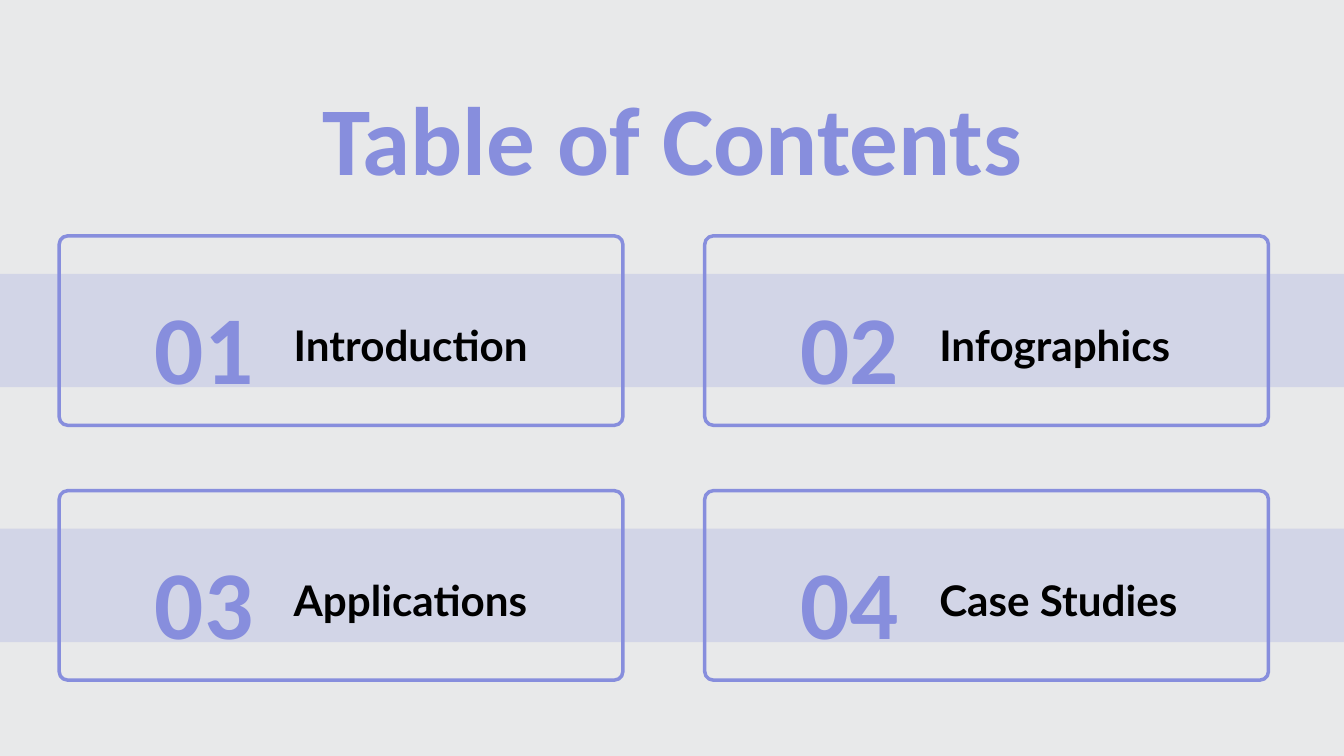
from lxml import etree
from pptx import Presentation
from pptx.dml.color import RGBColor
from pptx.enum.shapes import MSO_SHAPE
from pptx.enum.text import MSO_ANCHOR, MSO_AUTO_SIZE, PP_ALIGN
from pptx.oxml.ns import qn
from pptx.util import Pt

RECTANGLE, ROUNDED = MSO_SHAPE.RECTANGLE, MSO_SHAPE.ROUNDED_RECTANGLE
LEFT, CENTER = PP_ALIGN.LEFT, PP_ALIGN.CENTER

# Content
TITLE = "Table of Contents"
SECTIONS = [
    ("01", "Introduction"),
    ("02", "Infographics"),
    ("03", "Applications"),
    ("04", "Case Studies"),
]

# Style
COLORS = {"background": "E8E9EA", "accent": "878EDD", "label": "000000"}
HEADING = {"font": "Calibri", "size": 104.1, "color": "accent",
           "spacing": 1.18, "align": CENTER}
LABEL = {"font": "Lato", "size": 45.2, "color": "label",
         "spacing": 1.4, "align": LEFT}
BAND_ALPHA = 22

# Grid, in points
SLIDE_W, SLIDE_H = 1440, 810
COLUMNS = 2
GRID_LEFT, GRID_TOP = 63.4, 252.7
COLUMN_STEP, ROW_STEP = 691.7, 273
CARD_W, CARD_H = 604, 203
BAND_H = 121.5
CORNER = 9.2


def rgb(name):
    return RGBColor.from_string(COLORS[name])


def place(shape, left, top, width, height):
    shape.left, shape.top = Pt(left), Pt(top)
    shape.width, shape.height = Pt(width), Pt(height)


def write(shape, text, style):
    frame = shape.text_frame
    frame.text = text
    frame.word_wrap = True
    frame.auto_size = MSO_AUTO_SIZE.SHAPE_TO_FIT_TEXT
    frame.vertical_anchor = MSO_ANCHOR.TOP
    frame.margin_left = frame.margin_right = 0
    frame.margin_top = frame.margin_bottom = 0
    paragraph = frame.paragraphs[0]
    paragraph.alignment = style["align"]
    paragraph.line_spacing = style["spacing"]
    font = paragraph.runs[0].font
    font.name, font.size, font.bold = style["font"], Pt(style["size"]), True
    font.color.rgb = rgb(style["color"])


def add_text(slide, text, style, *box):
    write(slide.shapes.add_textbox(*map(Pt, box)), text, style)


def add_band(slide, top):
    band = slide.shapes.add_shape(RECTANGLE, 0, Pt(top), Pt(SLIDE_W), Pt(BAND_H))
    band.shadow.inherit = False
    band.fill.solid()
    band.fill.fore_color.rgb = rgb("accent")
    band.line.fill.background()
    color = band.fill._xPr.find(qn("a:solidFill"))[0]
    etree.SubElement(color, qn("a:alpha"), val=str(BAND_ALPHA * 1000))


def add_card(slide, left, top):
    card = slide.shapes.add_shape(ROUNDED, Pt(left), Pt(top), Pt(CARD_W), Pt(CARD_H))
    card.adjustments[0] = CORNER / CARD_H
    card.shadow.inherit = False
    card.fill.background()
    card.line.color.rgb = rgb("accent")
    card.line.width = Pt(3.75)


def main():
    prs = Presentation()
    prs.slide_width, prs.slide_height = Pt(SLIDE_W), Pt(SLIDE_H)
    slide = prs.slides.add_slide(prs.slide_layouts[5])
    slide.background.fill.solid()
    slide.background.fill.fore_color.rgb = rgb("background")

    # Title
    place(slide.shapes.title, 167, 61.2, 1106.6, 121.7)
    write(slide.shapes.title, TITLE, HEADING)

    # One band behind each row of cards
    for row in range(len(SECTIONS) // COLUMNS):
        add_band(slide, GRID_TOP + row * ROW_STEP + (CARD_H - BAND_H) / 2)

    # Cards with number and section name
    for index, (number, section) in enumerate(SECTIONS):
        row, column = divmod(index, COLUMNS)
        left = GRID_LEFT + column * COLUMN_STEP
        top = GRID_TOP + row * ROW_STEP
        add_card(slide, left, top)
        add_text(slide, number, HEADING, left + 88.3, top + 33.1, 134, 122.4)
        add_text(slide, section, LABEL, left + 251.3, top + 68.1, 319, 60.5)

    prs.save("out.pptx")


if __name__ == "__main__":
    main()
